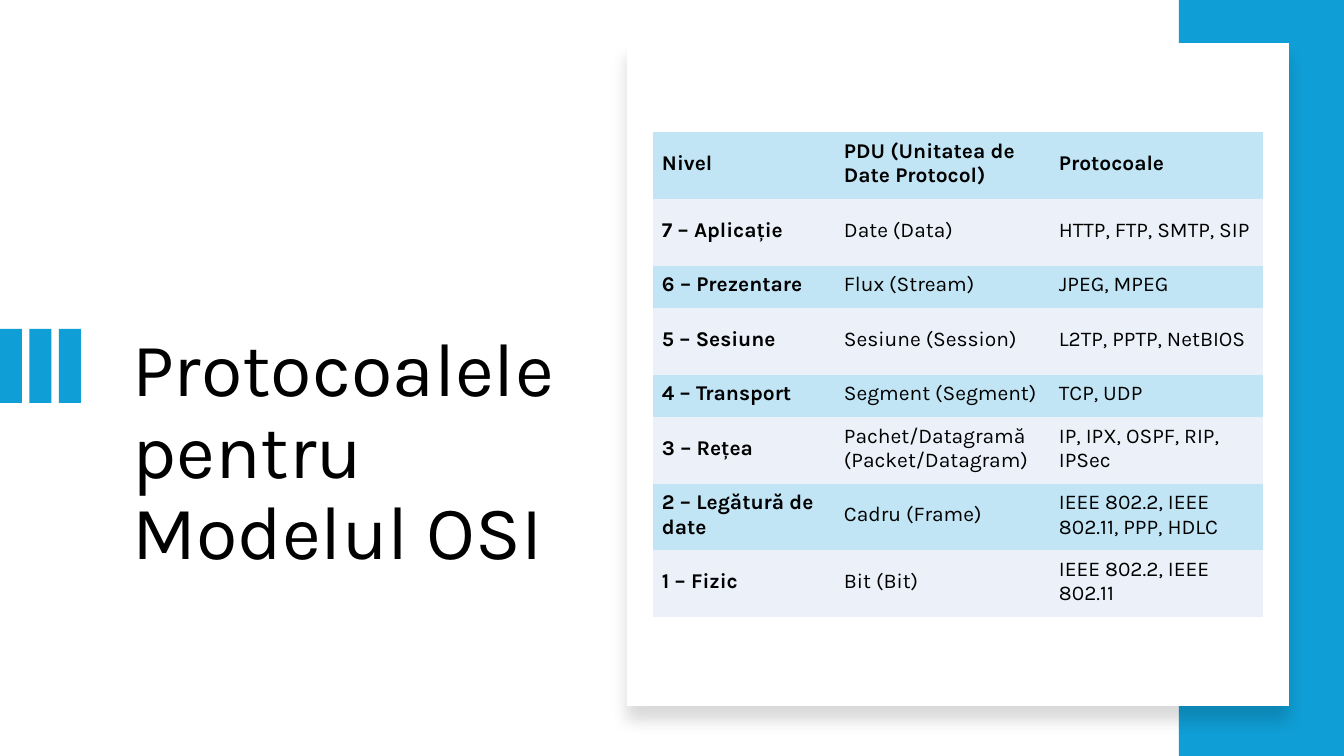
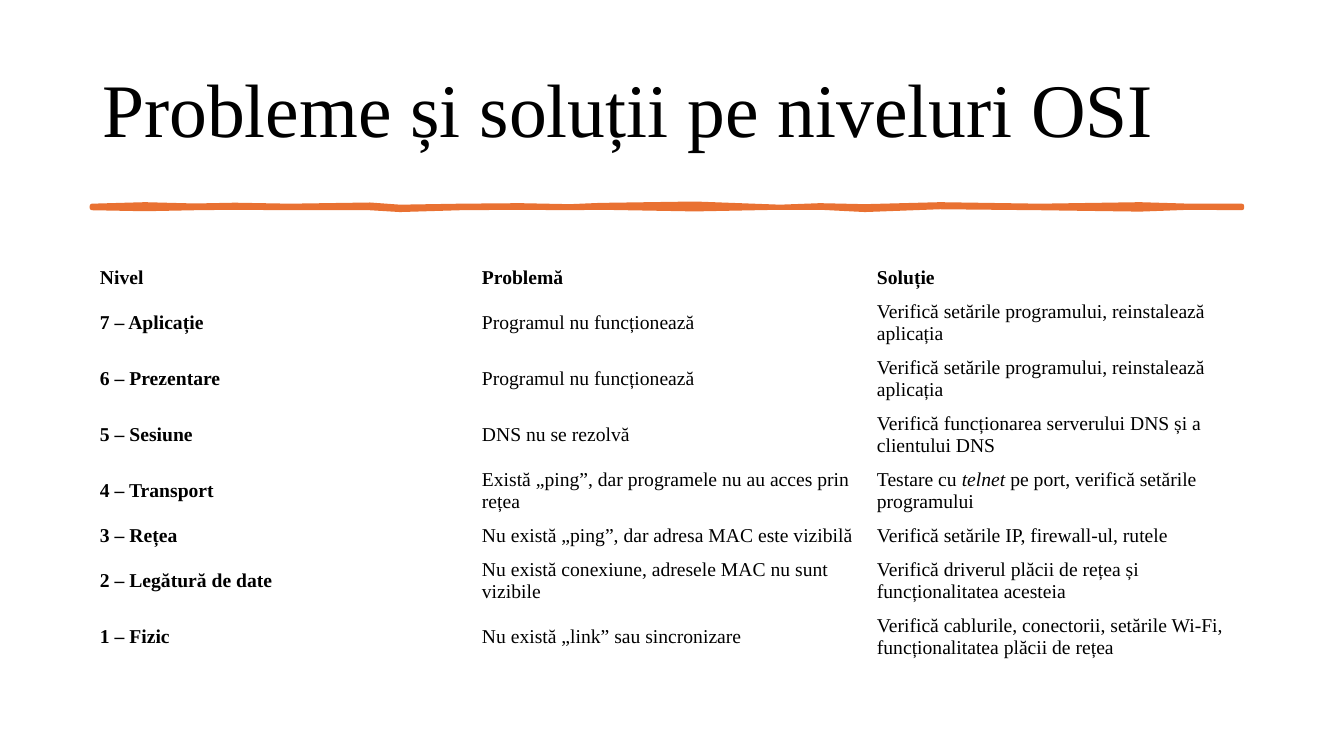
from lxml import etree
from pptx import Presentation
from pptx.dml.color import RGBColor
from pptx.enum.shapes import MSO_SHAPE
from pptx.enum.text import MSO_ANCHOR, MSO_AUTO_SIZE, PP_ALIGN
from pptx.oxml.ns import qn
from pptx.util import Emu, Pt

RECTANGLE = MSO_SHAPE.RECTANGLE
TOP, MIDDLE = MSO_ANCHOR.TOP, MSO_ANCHOR.MIDDLE
LEFT = PP_ALIGN.LEFT
NO_AUTOFIT = MSO_AUTO_SIZE.NONE

PX = 914400 / 100.8
PAGE_WIDTH, PAGE_HEIGHT = 1344, 756
TITLE_ONLY = 5
PLAIN_TABLE = "{2D5ABB26-0587-4C30-8999-92F81FD0307C}"
COLORS = {
    "text": "000000",
    "white": "FFFFFF",
    "blue": "0F9ED5",
    "row_blue": "C1E5F5",
    "row_pale": "ECF1F9",
    "orange": "E97132",
}

LEVELS = [
    "7 – Aplicație", "6 – Prezentare", "5 – Sesiune", "4 – Transport",
    "3 – Rețea", "2 – Legătură de date", "1 – Fizic",
]
PROTOCOLS = [
    ("Date (Data)", "HTTP, FTP, SMTP, SIP"),
    ("Flux (Stream)", "JPEG, MPEG"),
    ("Sesiune (Session)", "L2TP, PPTP, NetBIOS"),
    ("Segment (Segment)", "TCP, UDP"),
    ("Pachet/Datagramă (Packet/Datagram)", "IP, IPX, OSPF, RIP, IPSec"),
    ("Cadru (Frame)", "IEEE 802.2, IEEE 802.11, PPP, HDLC"),
    ("Bit (Bit)", "IEEE 802.2, IEEE 802.11"),
]
PROBLEMS = [
    ("Programul nu funcționează",
     "Verifică setările programului, reinstalează aplicația"),
    ("Programul nu funcționează",
     "Verifică setările programului, reinstalează aplicația"),
    ("DNS nu se rezolvă",
     "Verifică funcționarea serverului DNS și a clientului DNS"),
    ("Există „ping”, dar programele nu au acces prin rețea",
     "Testare cu *telnet* pe port, verifică setările programului"),
    ("Nu există „ping”, dar adresa MAC este vizibilă",
     "Verifică setările IP, firewall-ul, rutele"),
    ("Nu există conexiune, adresele MAC nu sunt vizibile",
     "Verifică driverul plăcii de rețea și funcționalitatea acesteia"),
    ("Nu există „link” sau sincronizare",
     "Verifică cablurile, conectorii, setările Wi-Fi, funcționalitatea plăcii de rețea"),
]
# Brush stroke profile: x, upper edge, lower edge
STROKE = [
    (92, 206, 208), (145, 204.5, 209), (195, 205.8, 208), (235, 205, 207.5),
    (290, 206, 208), (370, 204.8, 208), (400, 207, 209.8), (460, 206, 208),
    (520, 205.5, 207.5), (570, 206.5, 208), (600, 205.2, 207.5),
    (695, 203.8, 209.2), (780, 207, 207.5), (820, 205.5, 207.5),
    (865, 206.5, 209.8), (940, 204.5, 207), (1040, 206, 208),
    (1140, 204.5, 209.4), (1190, 206, 207.5), (1242, 206, 208),
]


def px(length):
    return Emu(round(length * PX))


def color(name):
    return RGBColor.from_string(COLORS[name])


def put_text(frame, text, *, font, size, bold=False, spacing=None):
    """Fill the first paragraph; words between asterisks become italic."""
    para = frame.paragraphs[0]
    para.alignment = LEFT
    if spacing:
        para.line_spacing = spacing
    for index, part in enumerate(text.split("*")):
        span = para.add_run()
        span.text = part
        span.font.name = font
        span.font.size = Pt(size)
        span.font.bold = bold
        span.font.italic = index % 2 == 1
        span.font.color.rgb = color("text")


def set_insets(target, insets):
    (target.margin_left, target.margin_top,
     target.margin_right, target.margin_bottom) = map(px, insets)


class SlideBuilder:
    def __init__(self):
        self.deck = Presentation()
        self.deck.slide_width = px(PAGE_WIDTH)
        self.deck.slide_height = px(PAGE_HEIGHT)
        self.page = None
        self.font = None

    def start_page(self, font):
        self.page = self.deck.slides.add_slide(self.deck.slide_layouts[TITLE_ONLY])
        self.font = font

    def title(self, text, left, top, width, height, anchor):
        box = self.page.shapes.title
        box.left, box.top, box.width, box.height = map(px, (left, top, width, height))
        frame = box.text_frame
        frame.word_wrap = True
        frame.auto_size = NO_AUTOFIT
        frame.vertical_anchor = anchor
        put_text(frame, text, font=self.font, size=54, spacing=0.9)

    def rectangle(self, left, top, width, height, fill, group=None):
        shapes = (group or self.page).shapes
        box = shapes.add_shape(RECTANGLE, *map(px, (left, top, width, height)))
        box.shadow.inherit = False
        box.fill.solid()
        box.fill.fore_color.rgb = color(fill)
        box.line.fill.background()
        return box

    def bars(self, count, top, width, height, pitch, fill):
        group = self.page.shapes.add_group_shape()
        for index in range(count):
            self.rectangle(index * pitch, top, width, height, fill, group)

    def card(self, left, top, width, height):
        """Draw a white rectangle with a soft shadow below it."""
        box = self.rectangle(left, top, width, height, "white")
        effects = box._element.spPr.find(qn("a:effectLst"))
        shadow = etree.SubElement(
            effects, qn("a:outerShdw"), blurRad=str(Pt(11)), dist=str(Pt(10)),
            dir="5400000", algn="t", rotWithShape="0")
        tint = etree.SubElement(shadow, qn("a:srgbClr"), val=COLORS["text"])
        etree.SubElement(tint, qn("a:alpha"), val="15000")

    def brush_stroke(self, profile, fill):
        upper = [(px(x), px(high)) for x, high, low in profile]
        lower = [(px(x), px(low)) for x, high, low in profile]
        start, *outline = upper + lower[::-1]
        builder = self.page.shapes.build_freeform(*start)
        builder.add_line_segments(outline, close=True)
        stroke = builder.convert_to_shape()
        stroke.shadow.inherit = False
        stroke.fill.solid()
        stroke.fill.fore_color.rgb = color(fill)
        stroke.line.color.rgb = color(fill)
        stroke.line.width = Pt(3.25)
        etree.SubElement(stroke.line._ln, qn("a:round"))

    def table(self, rows, left, top, widths, heights, *, size, insets, bands=None):
        frame = self.page.shapes.add_table(
            len(rows), len(widths),
            *map(px, (left, top, sum(widths), sum(heights))))
        table = frame.table
        table._tbl.tblPr.find(qn("a:tableStyleId")).text = PLAIN_TABLE
        for column, width in zip(table.columns, widths):
            column.width = px(width)
        for row, height in zip(table.rows, heights):
            row.height = px(height)
        for row_index, row in enumerate(rows):
            for column_index, text in enumerate(row):
                cell = table.cell(row_index, column_index)
                cell.vertical_anchor = MIDDLE
                set_insets(cell, insets)
                if bands:
                    cell.fill.solid()
                    cell.fill.fore_color.rgb = color(bands[row_index % len(bands)])
                else:
                    cell.fill.background()
                put_text(cell.text_frame, text, font=self.font, size=size,
                         bold=row_index == 0 or column_index == 0)


def with_levels(header, details):
    return [header] + [(level, *detail) for level, detail in zip(LEVELS, details)]


def protocols_page(slides):
    slides.start_page("Karla")
    slides.title("Protocoalele pentru Modelul OSI", 122, 326, 445, 263, TOP)
    slides.bars(3, 329, 22, 74, 29.5, "blue")
    slides.rectangle(1179, 0, 165, PAGE_HEIGHT, "blue")
    slides.card(627, 43, 662, 663)
    header = ("Nivel", "PDU (Unitatea de Date Protocol)", "Protocoale")
    slides.table(
        with_levels(header, PROTOCOLS), 653, 132, [182, 215, 213],
        [67, 67, 42, 67, 42, 67, 66, 67], size=15, insets=(9, 5, 9, 9),
        bands=("row_blue", "row_pale"))


def problems_page(slides):
    slides.start_page("Times New Roman")
    slides.title("Probleme și soluții pe niveluri OSI", 92, 40, 1159, 146, MIDDLE)
    slides.brush_stroke(STROKE, "orange")
    slides.table(
        with_levels(("Nivel", "Problemă", "Soluție"), PROBLEMS), 92, 261,
        [382, 395, 382], [34, 56, 56, 56, 56, 34, 56, 56],
        size=14, insets=(8, 4, 8, 4))


def main():
    slides = SlideBuilder()
    protocols_page(slides)
    problems_page(slides)
    slides.deck.save("out.pptx")


if __name__ == "__main__":
    main()
